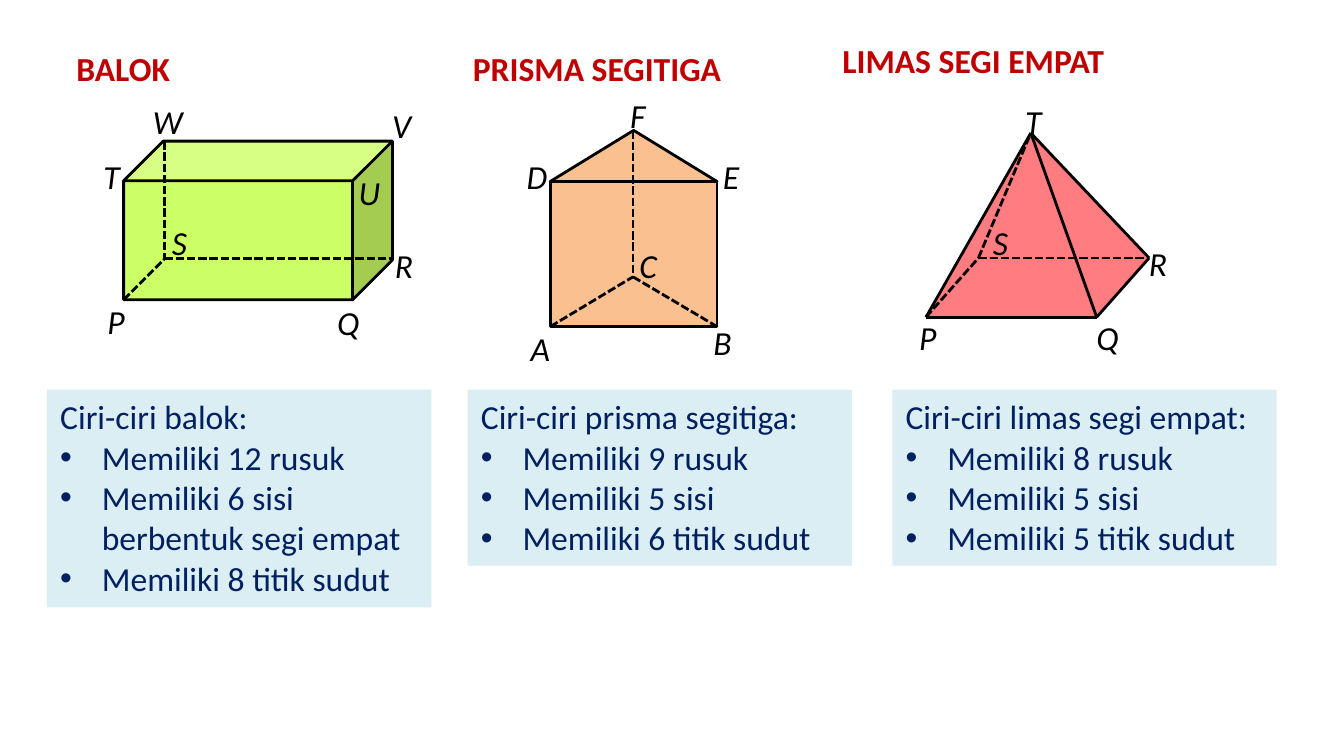
from dataclasses import dataclass
from typing import NamedTuple

from lxml.etree import SubElement
from pptx import Presentation
from pptx.dml.color import RGBColor
from pptx.enum.dml import MSO_LINE_DASH_STYLE as Dash
from pptx.enum.shapes import MSO_CONNECTOR as Connector, MSO_SHAPE as Preset
from pptx.enum.text import MSO_ANCHOR as Anchor, PP_ALIGN as Align
from pptx.oxml.ns import qn
from pptx.util import Inches, Pt

SLIDE_WIDTH = Inches(10)
SLIDE_HEIGHT = SLIDE_WIDTH * 9 // 16
CELL = SLIDE_WIDTH / 100
LINE_ROWS = 4
INDENT = 3.1
FONT, TEXT_SIZE, EDGE_WIDTH = "Calibri", Pt(18), Pt(1.5)
BLACK = RGBColor(0x00, 0x00, 0x00)
RED = RGBColor(0xC0, 0x00, 0x00)
NAVY = RGBColor(0x00, 0x20, 0x60)
PALE_BLUE = RGBColor(0xDB, 0xEE, 0xF4)
LIME = RGBColor(0xCC, 0xFF, 0x66)
ORANGE = RGBColor(0xFA, 0xC0, 0x90)
CORAL = RGBColor(0xFF, 0x7C, 0x80)


class Area(NamedTuple):
    """Left column, top row, and spans in grid cells."""
    left: float
    top: float
    columns: float
    rows: float


class Face(NamedTuple):
    """A preset face, with its adjustment values."""
    preset: Preset
    area: Area
    adjustments: tuple[float, ...] = ()


class Letter(NamedTuple):
    """A corner letter and the place of its box."""
    name: str
    left: float
    top: float
    columns: float


@dataclass(frozen=True)
class Solid:
    """A titled solid with its corners, edges and features."""
    title: str
    title_area: Area
    color: RGBColor
    outlined: bool
    faces: tuple[Face, ...]
    side: str
    corners: dict[str, tuple[float, float]]
    hidden_edges: tuple[str, ...]
    edges: tuple[str, ...]
    letters: tuple[Letter, ...]
    panel: Area
    features: tuple[str, ...]


SOLIDS = (
    Solid(
        "BALOK", Area(4.7, 3.1, 9.1, LINE_ROWS), LIME, True,
        (Face(Preset.CUBE, Area(9.2, 10.5, 20, 11.8)),), "",
        {"P": (9.2, 22.3), "R": (29.2, 19.25), "S": (12.25, 19.25), "W": (12.25, 10.5)},
        ("WS", "SR", "PS"), (),
        (Letter("P", 7, 21.9, 3.3), Letter("Q", 24.1, 22, 3.7), Letter("R", 28.4, 17.7, 3.4),
         Letter("S", 11.8, 16, 3.2), Letter("T", 6.7, 11.1, 3.2), Letter("U", 25.7, 12.3, 3.6),
         Letter("V", 28.2, 7.3, 3.5), Letter("W", 10.4, 7, 4.3)),
        Area(3.5, 29, 28.6, 16.2),
        ("Ciri-ciri balok:", "Memiliki 12 rusuk", "Memiliki 6 sisi berbentuk segi empat",
         "Memiliki 8 titik sudut"),
    ),
    Solid(
        "PRISMA SEGITIGA", Area(34.2, 3.1, 20.7, LINE_ROWS), ORANGE, True,
        (Face(Preset.RECTANGLE, Area(40.95, 13.5, 12.4, 10.8)),
         Face(Preset.ISOSCELES_TRIANGLE, Area(40.95, 9.7, 12.4, 3.8))), "",
        {"A": (40.95, 24.3), "B": (53.35, 24.3), "C": (47.1, 20.6), "F": (47.1, 9.7)},
        ("FC", "AC", "CB"), (),
        (Letter("A", 38.5, 23.9, 3.5), Letter("B", 52.1, 23.5, 3.5), Letter("C", 46.6, 17.7, 3.3),
         Letter("D", 38.2, 11.1, 3.6), Letter("E", 52.8, 11.1, 3.2), Letter("F", 45.9, 6.6, 3.2)),
        Area(34.8, 29, 28.6, 13.1),
        ("Ciri-ciri prisma segitiga:", "Memiliki 9 rusuk", "Memiliki 5 sisi",
         "Memiliki 6 titik sudut"),
    ),
    Solid(
        "LIMAS SEGI EMPAT", Area(61.7, 2.5, 21.7, LINE_ROWS), CORAL, False,
        (Face(Preset.ISOSCELES_TRIANGLE, Area(68.9, 9.9, 12.7, 13.7), (0.61,)),), "QTR",
        {"P": (68.9, 23.6), "Q": (81.6, 23.6), "R": (85.5, 19.2), "S": (72.8, 19.2),
         "T": (76.7, 9.9)},
        ("PS", "SR", "ST"), ("PQ", "QR", "PT", "QT", "TR"),
        (Letter("P", 67.4, 23.1, 3.4), Letter("Q", 80.6, 23.1, 2.9), Letter("R", 84.5, 17.6, 3),
         Letter("S", 72.9, 16, 2.3), Letter("T", 75.3, 7, 3.4)),
        Area(66.4, 29, 28.6, 13.1),
        ("Ciri-ciri limas segi empat:", "Memiliki 8 rusuk", "Memiliki 5 sisi",
         "Memiliki 5 titik sudut"),
    ),
)


def cells(*counts: float) -> list[int]:
    """Convert grid cells to slide units."""
    return [round(count * CELL) for count in counts]


def paint(shape, fill: RGBColor, outlined: bool = False) -> None:
    """Give a shape a flat fill and an optional black outline."""
    shape.shadow.inherit = False
    shape.fill.solid()
    shape.fill.fore_color.rgb = fill
    if outlined:
        shape.line.color.rgb = BLACK
        shape.line.width = EDGE_WIDTH
    else:
        shape.line.fill.background()


def add_text(slide, text: str, area: Area, *, color: RGBColor, bold: bool = False,
             italic: bool = False, wrap: bool = True, fill: RGBColor | None = None) -> None:
    """Write lines in a box; a filled box lists all lines after its first."""
    if fill is None:
        box = slide.shapes.add_textbox(*cells(*area))
    else:
        box = slide.shapes.add_shape(Preset.RECTANGLE, *cells(*area))
        paint(box, fill)
    frame = box.text_frame
    frame.word_wrap = wrap
    frame.vertical_anchor = Anchor.TOP
    frame.text = text
    for number, paragraph in enumerate(frame.paragraphs):
        paragraph.alignment = Align.LEFT
        if number:
            properties = paragraph._p.get_or_add_pPr()
            indent, = cells(INDENT)
            properties.set("marL", str(indent))
            properties.set("indent", str(-indent))
            SubElement(properties, qn("a:buFont"), typeface="Arial")
            SubElement(properties, qn("a:buChar"), char="•")
        for run in paragraph.runs:
            font = run.font
            font.name, font.size = FONT, TEXT_SIZE
            font.bold, font.italic = bold, italic
            font.color.rgb = color


def add_edge(slide, solid: Solid, edge: str, dashed: bool) -> None:
    """Join the two corners named by an edge."""
    start, end = (solid.corners[name] for name in edge)
    line = slide.shapes.add_connector(Connector.STRAIGHT, *cells(*start, *end))
    line.line.color.rgb = BLACK
    line.line.width = EDGE_WIDTH
    if dashed:
        line.line.dash_style = Dash.SQUARE_DOT
    SubElement(line._element.spPr, qn("a:effectLst"))


def draw_solid(slide, solid: Solid) -> None:
    """Draw one solid with its title, letters and feature list."""
    add_text(slide, solid.title, solid.title_area, color=RED, bold=True, wrap=False)
    if solid.side:
        start, *others = (cells(*solid.corners[name]) for name in solid.side)
        outline = slide.shapes.build_freeform(*start)
        outline.add_line_segments(others, close=True)
        paint(outline.convert_to_shape(), solid.color, solid.outlined)
    for face in solid.faces:
        shape = slide.shapes.add_shape(face.preset, *cells(*face.area))
        for index, value in enumerate(face.adjustments):
            shape.adjustments[index] = value
        paint(shape, solid.color, solid.outlined)
    for edge in solid.hidden_edges:
        add_edge(slide, solid, edge, dashed=True)
    for edge in solid.edges:
        add_edge(slide, solid, edge, dashed=False)
    for name, left, top, columns in solid.letters:
        add_text(slide, name, Area(left, top, columns, LINE_ROWS), color=BLACK, italic=True)
    add_text(slide, "\n".join(solid.features), solid.panel, color=NAVY, fill=PALE_BLUE)


def main() -> None:
    """Build and save the slide of solids."""
    deck = Presentation()
    deck.slide_width, deck.slide_height = SLIDE_WIDTH, SLIDE_HEIGHT
    slide = deck.slides.add_slide(deck.slide_layouts[6])
    for solid in SOLIDS:
        draw_solid(slide, solid)
    deck.save("out.pptx")


if __name__ == "__main__":
    main()
